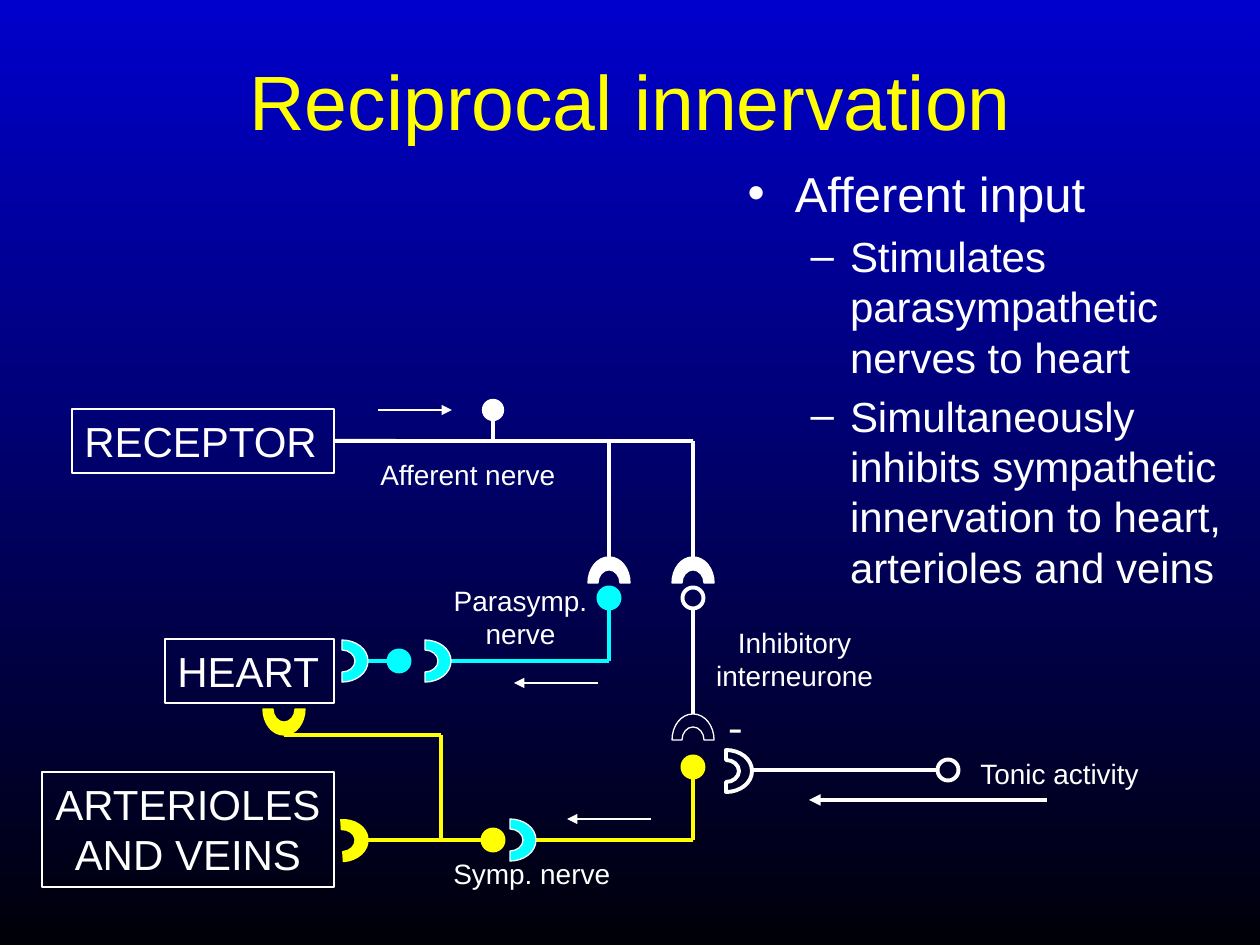
import dataclasses
import itertools
import math

import pptx
import pptx.dml.color
import pptx.enum.shapes
import pptx.enum.text
import pptx.oxml
import pptx.oxml.ns
import pptx.util

EMU_PER_PX = 914400 / 126
RIGHT, DOWN, UP = 0, 90, 270
CUP_WIDTH, CUP_DEPTH = 42, 26
# Upright cup: inner arch, right foot, outer arch; each arch is two curves.
CUP_POINTS = [(10, 26), (10, 19), (15, 13), (21, 13), (27, 13), (32, 19), (32, 26),
              (42, 26), (42, 12), (33, 0), (21, 0), (9, 0), (0, 12), (0, 26)]
CUP_CURVES = (0, 3, 7, 10)


@dataclasses.dataclass(frozen=True)
class Theme:
    sky: str = "0000CC"
    night: str = "000008"
    white: str = "FFFFFF"
    yellow: str = "FFFF00"
    cyan: str = "00FFFF"
    font: str = "Arial"
    sign_font: str = "Times New Roman"
    title: int = 44
    bullet: int = 28
    organ: int = 24
    label: int = 16
    hairline: float = 0.75
    arrow: float = 1.5
    nerve: float = 2.25


THEME = Theme()


def px(length):
    return pptx.util.Emu(round(length * EMU_PER_PX))


def rgb(value):
    return pptx.dml.color.RGBColor.from_string(value)


def drawing_element(tag, attributes=""):
    return pptx.oxml.parse_xml(f'<a:{tag} {pptx.oxml.ns.nsdecls("a")} {attributes}/>')


def set_all(target, values):
    for name, value in values.items():
        setattr(target, name, value)


def place(shape, left, top, width, height):
    set_all(shape, {"left": px(left), "top": px(top),
                    "width": px(width), "height": px(height)})


def write(frame, lines, sizes, color=THEME.white, font=THEME.font, levels=None):
    for index, (text, size) in enumerate(zip(lines, sizes)):
        para = frame.paragraphs[0] if index == 0 else frame.add_paragraph()
        if levels:
            para.level = levels[index]
        span = para.add_run()
        span.text = text
        set_all(span.font, {"name": font, "size": pptx.util.Pt(size)})
        span.font.color.rgb = rgb(color)


def paint(shape, fill, line, weight):
    shape.shadow.inherit = False
    if fill:
        shape.fill.solid()
        shape.fill.fore_color.rgb = rgb(fill)
    else:
        shape.fill.background()
    shape.line.color.rgb = rgb(line)
    shape.line.width = pptx.util.Pt(weight)


def bend(outline):
    """Turn each run of three straight segments of a cup's arches into one curve."""
    segments = outline._element.xpath(".//a:lnTo")
    for first in CUP_CURVES:
        curve = drawing_element("cubicBezTo")
        segments[first].addprevious(curve)
        for segment in segments[first:first + 3]:
            curve.append(segment[0])
            segment.getparent().remove(segment)


class Region:
    """A part of the page; its drawing methods take px from its top left corner."""

    def __init__(self, page, left, top):
        self.shapes, self.left, self.top = page.shapes, left, top

    def spot(self, x, y):
        return px(self.left + x), px(self.top + y)

    def line(self, start, end, color=THEME.white, weight=THEME.nerve, arrow=False):
        connector = self.shapes.add_connector(
            pptx.enum.shapes.MSO_CONNECTOR.STRAIGHT, *self.spot(*start), *self.spot(*end))
        connector.line.color.rgb = rgb(color)
        connector.line.width = pptx.util.Pt(weight)
        if arrow:
            connector.line._get_or_add_ln().append(
                drawing_element("tailEnd", 'type="triangle"'))
        connector._element.spPr.append(drawing_element("effectLst"))
        return connector

    def trace(self, points, color=THEME.white):
        for start, end in itertools.pairwise(points):
            self.line(start, end, color)

    def cell(self, x, y, fill, weight=THEME.nerve):
        """Nerve cell body centred at x, y."""
        body = self.shapes.add_shape(
            pptx.enum.shapes.MSO_SHAPE.OVAL, *self.spot(x - 10.5, y - 10.5), px(21), px(21))
        paint(body, fill, fill or THEME.white, weight)

    def cup(self, x, y, angle, fill, line=THEME.white, weight=THEME.hairline):
        """Synapse with its apex at x, y, bulging towards angle."""
        turn = math.radians(angle)
        left = x - CUP_DEPTH * math.cos(turn) - CUP_WIDTH / 2
        top = y - CUP_DEPTH * math.sin(turn) - CUP_DEPTH
        points = [self.spot(left + across, top + down) for across, down in CUP_POINTS]
        builder = self.shapes.build_freeform(*points[0], scale=1.0)
        builder.add_line_segments(points[1:], close=True)
        outline = builder.convert_to_shape()
        bend(outline)
        # The arch fills the upper half of its frame, so it turns about its feet.
        frame = outline._element.xpath(".//a:path")[0]
        frame.set("h", str(2 * int(frame.get("h"))))
        outline.height = 2 * outline.height
        outline.rotation = (angle + 90) % 360
        paint(outline, fill, line, weight)

    def label(self, x, y, width, height, lines, size=THEME.label,
              font=THEME.font, wrap=False):
        box = self.shapes.add_textbox(*self.spot(x, y), px(width), px(height))
        self.fill_label(box, lines, size, font, wrap)

    def organ(self, x, y, width, height, lines, wrap=False):
        box = self.shapes.add_shape(
            pptx.enum.shapes.MSO_SHAPE.RECTANGLE, *self.spot(x, y), px(width), px(height))
        paint(box, None, THEME.white, THEME.hairline)
        self.fill_label(box, lines, THEME.organ, THEME.font, wrap)
        return box

    def fill_label(self, box, lines, size, font, wrap):
        set_all(box.text_frame, {"word_wrap": wrap,
                                 "vertical_anchor": pptx.enum.text.MSO_ANCHOR.TOP})
        write(box.text_frame, lines, [size] * len(lines), font=font)
        align = pptx.enum.text.PP_ALIGN
        for para in box.text_frame.paragraphs:
            para.alignment = align.CENTER if len(lines) > 1 else align.LEFT


def paint_background(page):
    fill = page.background.fill
    fill.gradient()
    fill.gradient_angle = 270
    for stop, color, position in zip(fill.gradient_stops, (THEME.sky, THEME.night), (0, 1)):
        stop.color.rgb = rgb(color)
        stop.position = position


def fill_title(title, box):
    place(title, *box)
    write(title.text_frame, ["Reciprocal innervation"], [THEME.title], THEME.yellow)


def fill_bullets(body, box):
    place(body, *box)
    body.text_frame.auto_size = pptx.enum.text.MSO_AUTO_SIZE.NONE
    write(body.text_frame,
          ["Afferent input",
           "Stimulates parasympathetic nerves to heart",
           "Simultaneously inhibits sympathetic innervation to heart, arterioles and veins"],
          [THEME.bullet, THEME.organ, THEME.organ], levels=[0, 1, 1])


def draw_organs(region):
    """Draw the three organ boxes and return the receptor."""
    receptor = region.organ(30, 0, 262, 64, ["RECEPTOR"], wrap=True)
    region.organ(123, 230, 169, 64, ["HEART"])
    region.organ(0, 363, 292, 115, ["ARTERIOLES", "AND VEINS"])
    return receptor


def draw_afferent(region, receptor):
    region.line((0, 42), (359, 42)).begin_connect(receptor, 3)
    region.line((159, 21), (159, 42))
    region.cell(159, 11, THEME.white, THEME.hairline)
    for x in (275, 359):
        region.line((x, 42), (x, 158))
        region.cup(x, 158, UP, THEME.white)
    region.line((44, 11), (118, 11), weight=THEME.arrow, arrow=True)
    region.label(34, 52, 202, 47, ["Afferent nerve"])


def draw_parasympathetic(region):
    region.trace([(269, 32), (269, 84), (111, 84)], THEME.cyan)
    region.line((59, 84), (17, 84), THEME.cyan)
    for x in (28, 111):
        region.cup(x, 84, RIGHT, THEME.cyan)
    for x, y in ((269, 21), (59, 84)):
        region.cell(x, y, THEME.cyan)
    region.line((258, 106), (174, 106), weight=THEME.arrow, arrow=True)
    region.label(101, 0, 159, 81, ["Parasymp.", "nerve"])


def draw_interneurone(region):
    region.cell(21, 11, None)
    region.line((21, 22), (21, 127))
    region.cup(21, 127, UP, None)
    region.label(31, 32, 183, 81, ["Inhibitory", "interneurone"])
    region.label(44, 106, 39, 63, ["-"], THEME.organ, THEME.sign_font)


def draw_sympathetic(region):
    region.trace([(431, 84), (431, 158), (274, 158)], THEME.yellow)
    region.line((221, 158), (106, 158), THEME.yellow)
    region.trace([(179, 158), (179, 53), (22, 53), (22, 43)], THEME.yellow)
    region.cup(274, 158, RIGHT, THEME.cyan)
    region.cup(106, 157, -3.5, THEME.yellow, THEME.yellow)
    region.cup(22, 53, DOWN, THEME.yellow, THEME.yellow)
    for x, y in ((431, 85), (231, 158)):
        region.cell(x, y, THEME.yellow)
    region.line((389, 137), (305, 137), weight=THEME.arrow, arrow=True)
    region.label(179, 168, 183, 47, ["Symp. nerve"])


def draw_tonic(region):
    region.cup(26, 22, RIGHT, None, weight=THEME.nerve)
    region.line((24, 21), (211, 21))
    region.cell(222, 21, None)
    region.label(242, 1, 268, 47, ["Tonic activity"], wrap=True)
    region.line((321, 51), (83, 51), arrow=True)


def main():
    deck = pptx.Presentation()
    set_all(deck, {"slide_width": px(1260), "slide_height": px(945)})
    page = deck.slides.add_slide(deck.slide_layouts[1])
    paint_background(page)
    fill_title(page.shapes.title, (95, 32, 1071, 136))
    fill_bullets(page.placeholders[1], (735, 157, 525, 451))
    receptor = draw_organs(Region(page, 42, 409))
    draw_afferent(Region(page, 334, 399), receptor)
    draw_parasympathetic(Region(page, 340, 577))
    draw_interneurone(Region(page, 672, 587))
    draw_sympathetic(Region(page, 262, 682))
    draw_tonic(Region(page, 726, 749))
    deck.save("out.pptx")


if __name__ == "__main__":
    main()
